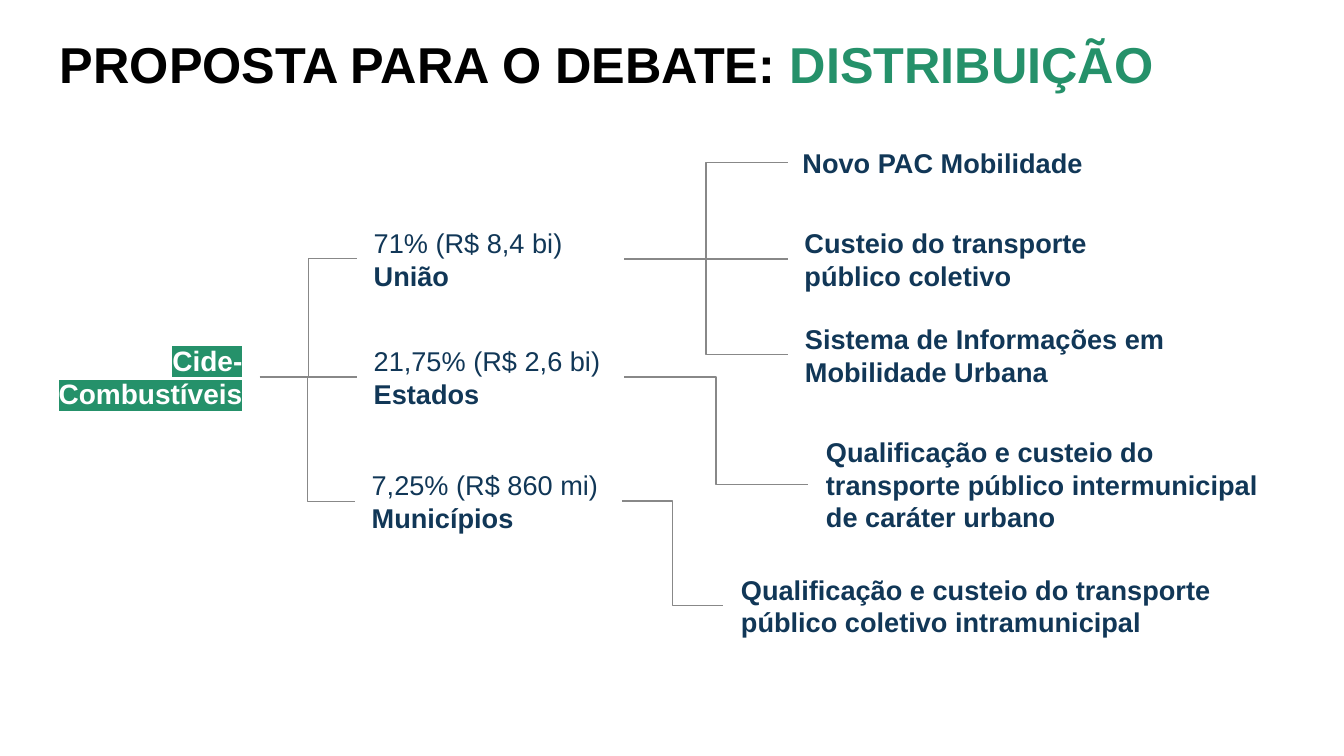
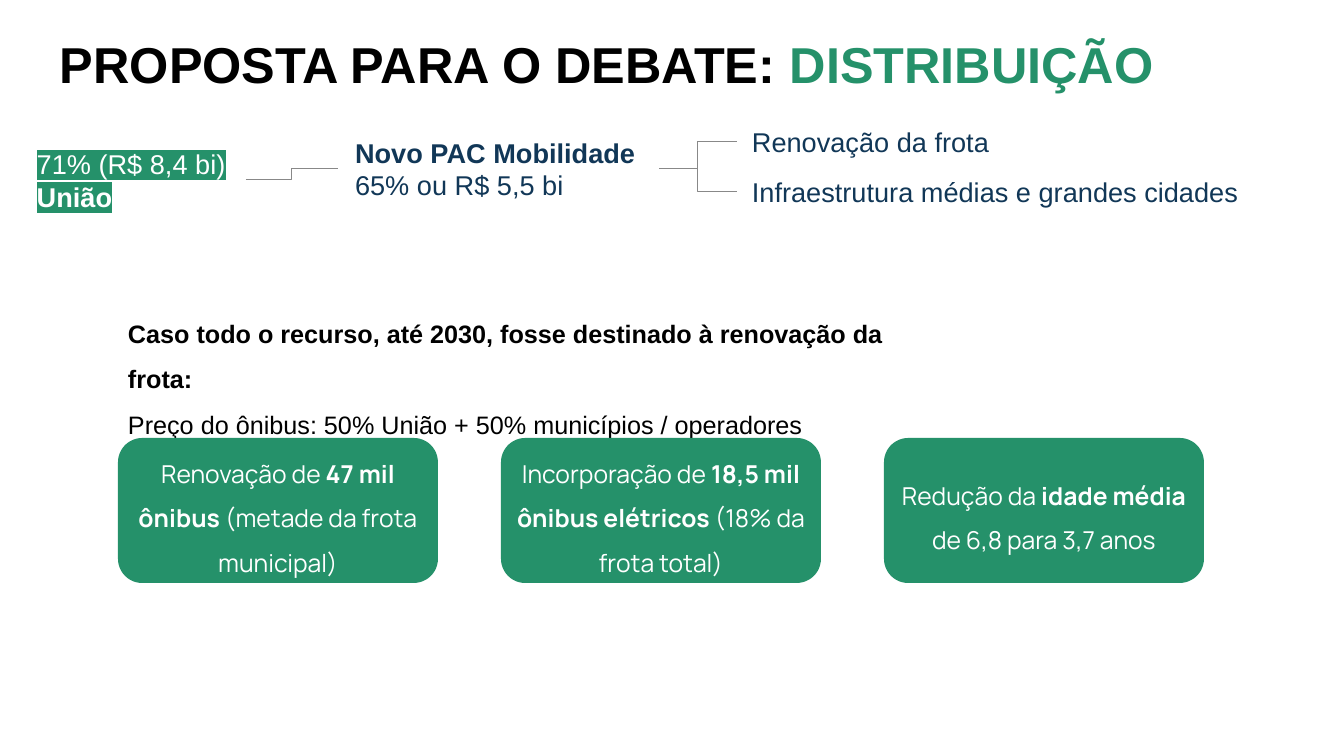
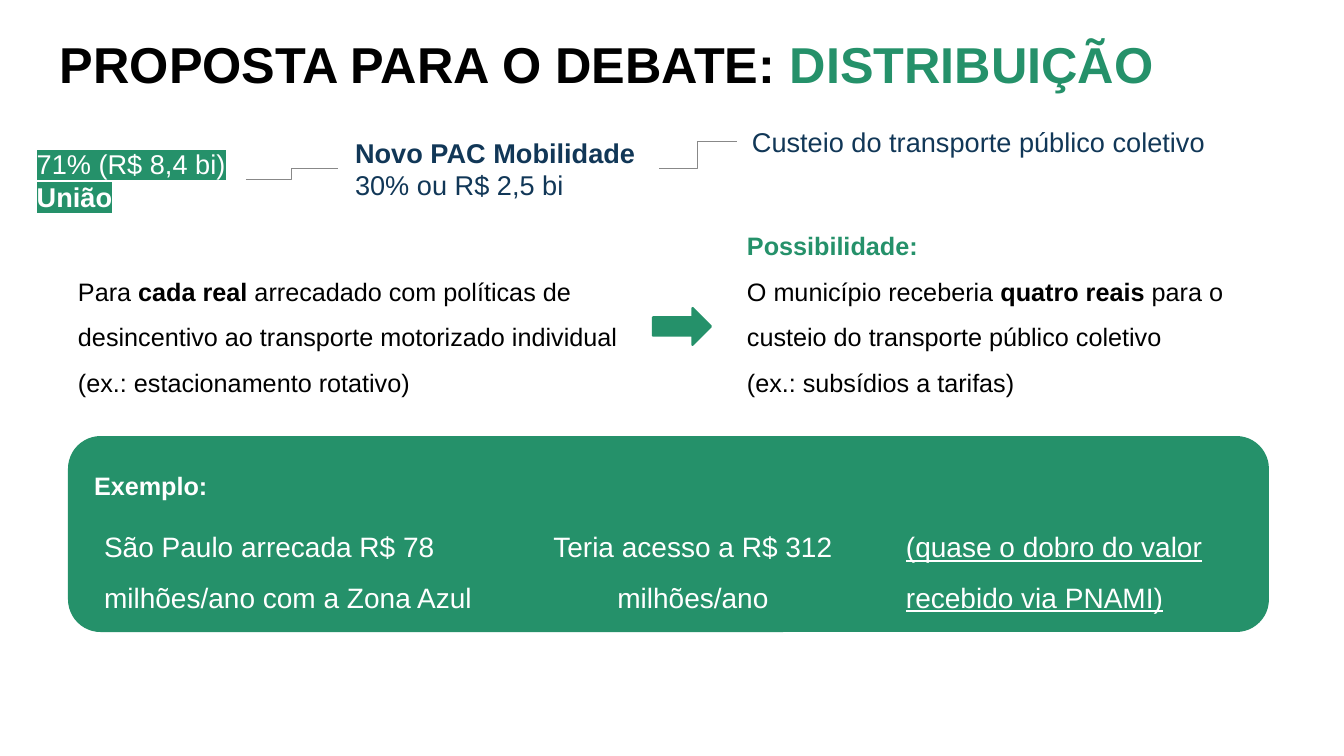
import dataclasses

import lxml.etree
import pptx
import pptx.dml.color
import pptx.enum.shapes
import pptx.enum.text
import pptx.oxml.ns
import pptx.util

RGB = pptx.dml.color.RGBColor
SHAPE = pptx.enum.shapes.MSO_SHAPE
ALIGN = pptx.enum.text.PP_ALIGN
ANCHOR = pptx.enum.text.MSO_ANCHOR
LEFT_SITE, RIGHT_SITE = 1, 3


@dataclasses.dataclass(frozen=True)
class Theme:
    green: RGB = RGB(0x25, 0x91, 0x6A)
    navy: RGB = RGB(0x11, 0x37, 0x57)
    grey: RGB = RGB(0x88, 0x88, 0x88)
    black: RGB = RGB(0, 0, 0)
    white: RGB = RGB(0xFF, 0xFF, 0xFF)
    font: str = "Arial"
    card_font: str = "Manrope"
    title: float = 36
    large: float = 20
    node: float = 19.4
    body: float = 18
    card: float = 17.6
    spacing: float = 1.5


THEME = Theme()


def px(value):
    return pptx.util.Emu(round(value * 914400 / 100.8))


def write(box, paragraphs, size, colour, font=THEME.font, align=ALIGN.LEFT,
          spacing=None, inset=(10, 5)):
    frame = box.text_frame
    frame.word_wrap = True
    frame.margin_left = frame.margin_right = px(inset[0])
    frame.margin_top = frame.margin_bottom = px(inset[1])
    for index, text in enumerate(paragraphs):
        para = frame.paragraphs[0] if index == 0 else frame.add_paragraph()
        para.alignment = align
        if spacing:
            para.line_spacing = spacing
        para.font.size = pptx.util.Pt(size)
        para.font.name = font
        para.font.color.rgb = colour
        for position, part in enumerate(text.split("**")):
            if part:
                span = para.add_run()
                span.text = part
                span.font.bold = position % 2 == 1


def add_text(page, area, paragraphs, size=THEME.body, colour=THEME.black,
             spacing=THEME.spacing, **options):
    box = page.shapes.add_textbox(*map(px, area))
    write(box, paragraphs, size, colour, spacing=spacing, **options)
    box.text_frame.auto_size = pptx.enum.text.MSO_AUTO_SIZE.SHAPE_TO_FIT_TEXT
    return box


def add_block(page, area, kind=SHAPE.ROUNDED_RECTANGLE, fill=THEME.green):
    box = page.shapes.add_shape(kind, *map(px, area))
    box.shadow.inherit = False
    box.line.fill.background()
    if fill is None:
        box.fill.background()
    else:
        box.fill.solid()
        box.fill.fore_color.rgb = fill
    box.text_frame.vertical_anchor = ANCHOR.MIDDLE
    return box


def add_node(page, area, *paragraphs, size=THEME.node, colour=THEME.navy, align=ALIGN.LEFT):
    box = add_block(page, area, fill=None)
    write(box, paragraphs, size, colour, align=align, inset=(13, 13))
    return box


def add_marked_node(page, area, *paragraphs, **options):
    box = add_node(page, area, *paragraphs, colour=THEME.white, **options)
    qn = pptx.oxml.ns.qn
    for para in box.text_frame.paragraphs:
        for span in para.runs:
            span.font.color.rgb = THEME.white
            fill = span.font._element.find(qn("a:solidFill"))
            highlight = lxml.etree.Element(qn("a:highlight"))
            lxml.etree.SubElement(highlight, qn("a:srgbClr"), val=str(THEME.green))
            fill.addnext(highlight)
    return box


def connect(page, source, *targets):
    for target in targets:
        line = page.shapes.add_connector(
            pptx.enum.shapes.MSO_CONNECTOR.ELBOW, 0, 0, 0, 0)
        line.begin_connect(source, RIGHT_SITE)
        line.end_connect(target, LEFT_SITE)
        line.line.color.rgb = THEME.grey
        line.line.width = pptx.util.Pt(0.75)
        lxml.etree.SubElement(line._element.spPr, pptx.oxml.ns.qn("a:effectLst"))


def add_page(deck):
    page = deck.slides.add_slide(deck.slide_layouts[6])
    title = add_text(page, (54, 30, 1258, 68),
                     ["**PROPOSTA PARA O DEBATE: ****DISTRIBUIÇÃO**"],
                     THEME.title, spacing=None, inset=(6, 3))
    title.text_frame.paragraphs[0].runs[-1].font.color.rgb = THEME.green
    return page


def add_union_branch(page, share, *uses):
    union = add_marked_node(page, (20, 142, 226, 76), "71% (R$ 8,4 bi)", "**União**")
    programme = add_node(page, (338, 127, 321, 83), "**Novo PAC Mobilidade**", share)
    connect(page, union, programme)
    for index, use in enumerate(uses):
        connect(page, programme, add_node(page, (737, 122 + 50 * index, 529, 40), use))


def build_overview(deck):
    page = add_page(deck)
    fuel_tax = add_marked_node(page, (36, 332, 224, 90), "**Cide-**", "**Combustíveis**",
                               size=THEME.large, align=ALIGN.RIGHT)
    branches = [
        ((357, 221), "71% (R$ 8,4 bi)", "União", [
            ((788, 148, 321, 30), "Novo PAC Mobilidade"),
            ((788, 223, 321, 72), "Custeio do transporte público coletivo"),
            ((788, 314, 428, 82), "Sistema de Informações em Mobilidade Urbana"),
        ]),
        ((357, 339), "21,75% (R$ 2,6 bi)", "Estados", [
            ((808, 433, 472, 103),
             "Qualificação e custeio do transporte público intermunicipal de caráter urbano"),
        ]),
        ((355, 463), "7,25% (R$ 860 mi)", "Municípios", [
            ((723, 554, 524, 103),
             "Qualificação e custeio do transporte público coletivo intramunicipal"),
        ]),
    ]
    for place, share, level, uses in branches:
        branch = add_node(page, (*place, 267, 76), share, f"**{level}**")
        connect(page, fuel_tax, branch)
        for area, use in uses:
            connect(page, branch, add_node(page, area, f"**{use}**"))


def build_fleet(deck):
    page = add_page(deck)
    add_union_branch(page, "65% ou R$ 5,5 bi", "Renovação da frota",
                     "Infraestrutura médias e grandes cidades")
    add_text(page, (118, 298, 844, 98), [
        "**Caso todo o recurso, até 2030, fosse destinado à renovação da frota:**",
        "Preço do ônibus: 50% União + 50% municípios / operadores",
    ])
    results = [
        "Renovação de **47 mil ônibus** (metade da frota municipal)",
        "Incorporação de **18,5 mil ônibus elétricos **(18% da frota total)",
        "Redução da **idade média **de 6,8 para 3,7 anos",
    ]
    for index, result in enumerate(results):
        card = add_block(page, (118 + 383 * index, 438, 320, 145))
        write(card, [result], THEME.card, THEME.white, THEME.card_font,
              ALIGN.CENTER, THEME.spacing, (6, 6))


def build_funding(deck):
    page = add_page(deck)
    add_union_branch(page, "30% ou R$ 2,5 bi", "Custeio do transporte público coletivo")
    add_text(page, (68, 256, 560, 143), [
        "Para **cada real **arrecadado com políticas de desincentivo ao transporte "
        "motorizado individual",
        "(ex.: estacionamento rotativo)",
    ])
    arrow = add_block(page, (653, 308, 58, 37), SHAPE.RIGHT_ARROW)
    arrow.line.color.rgb = THEME.green
    arrow.line.width = pptx.util.Pt(1.5)
    add_text(page, (737, 210, 391, 51), ["**Possibilidade:**"], colour=THEME.green)
    add_text(page, (737, 256, 529, 143), [
        "O município receberia **quatro reais **para o custeio do transporte público coletivo",
        "(ex.: subsídios a tarifas)",
    ])
    add_block(page, (68, 436, 1201, 196))
    add_text(page, (84, 450, 391, 51), ["**Exemplo:**"], colour=THEME.white)
    columns = [
        (94, 391, ALIGN.LEFT, "São Paulo arrecada R$ 78 milhões/ano com a Zona Azul"),
        (516, 354, ALIGN.CENTER, "Teria acesso a R$ 312 milhões/ano"),
        (896, 354, ALIGN.LEFT, "(quase o dobro do valor recebido via PNAMI)"),
    ]
    for left, width, align, text in columns:
        box = add_text(page, (left, 508, width, 107), [text], THEME.large,
                       THEME.white, align=align)
    box.text_frame.paragraphs[0].font.underline = True


def main():
    deck = pptx.Presentation()
    deck.slide_width, deck.slide_height = px(1344), px(756)
    build_overview(deck)
    build_fleet(deck)
    build_funding(deck)
    deck.save("out.pptx")


if __name__ == "__main__":
    main()
